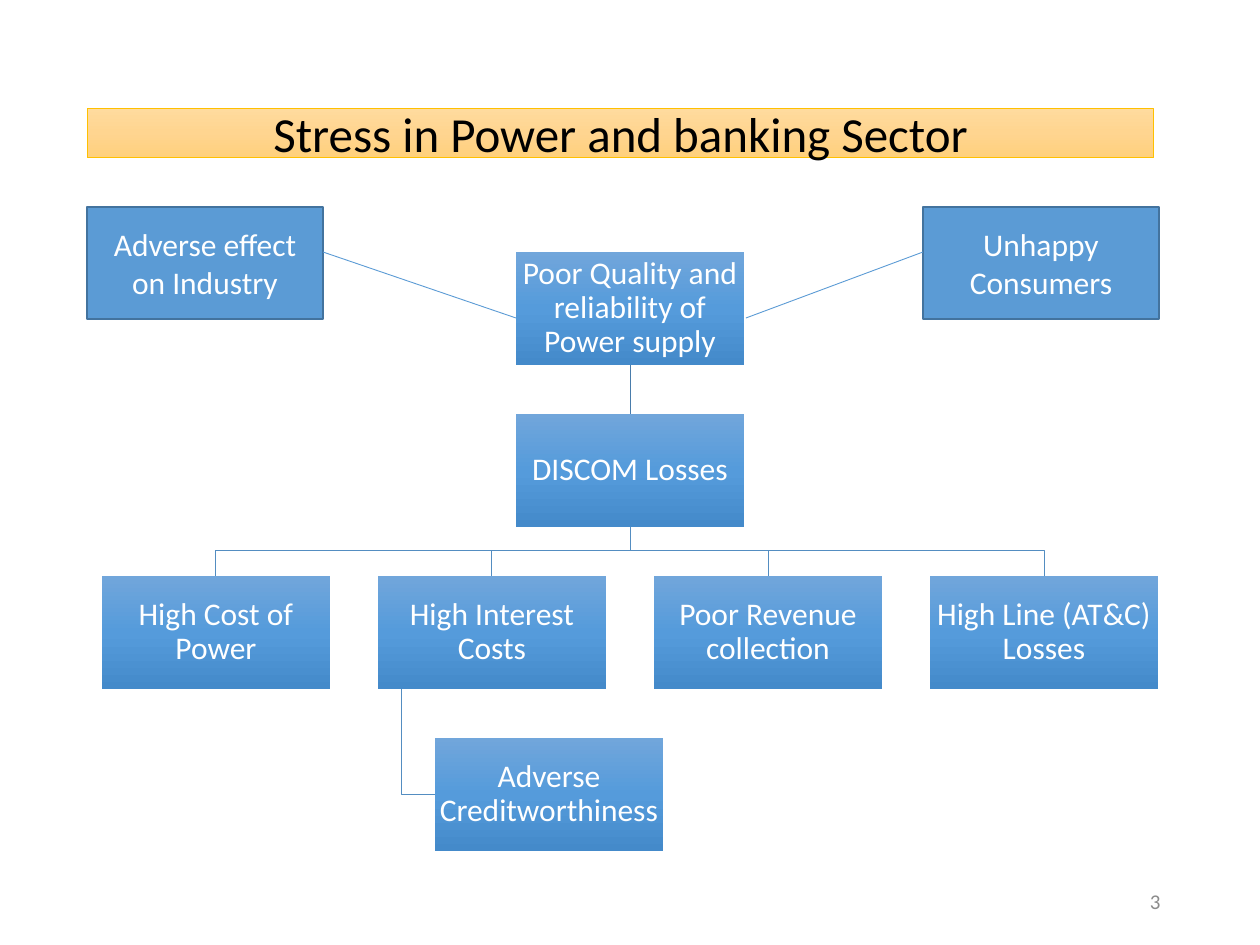
from lxml.etree import SubElement
from pptx import Presentation
from pptx.dml.color import RGBColor
from pptx.enum.shapes import MSO_CONNECTOR, MSO_SHAPE
from pptx.enum.text import MSO_ANCHOR, MSO_AUTO_SIZE, PP_ALIGN
from pptx.oxml.ns import qn
from pptx.util import Pt

PX = 914400 / 126
NODE_W, NODE_H = 228, 113
COLUMN_STEP, LEVEL_STEP = 276, 162
COLORS = {
    "white": "FFFFFF", "black": "000000", "number": "8C8C8C",
    "effect": "5B9BD5", "effect_edge": "43739E",
    "branch": "538DC1", "trunk": "497CAB", "title_edge": "FFC000",
}
NODE_GRADIENT = ("71A6DB", "559BDB", "448ACA")
TITLE_GRADIENT = ("FFDB9E", "FFD590", "FFD07C")


def emu(*lengths):
    """Turn px lengths into EMU."""
    return [round(length * PX) for length in lengths]


def color(name):
    """Look up a named colour."""
    return RGBColor.from_string(COLORS[name])


def set_line(shape, name, width=0.5):
    """Give an outline or connector its colour and width."""
    shape.line.color.rgb = color(name)
    shape.line.width = Pt(width)


def set_gradient(shape, stops):
    """Fill a shape with a three-stop gradient from top to bottom."""
    shape.fill.gradient()
    gradient = shape.fill._xPr.find(qn("a:gradFill"))
    for child in list(gradient):
        gradient.remove(child)
    stop_list = SubElement(gradient, qn("a:gsLst"))
    for position, stop in zip((0, 50000, 100000), stops):
        entry = SubElement(stop_list, qn("a:gs"), pos=str(position))
        SubElement(entry, qn("a:srgbClr"), val=stop)
    SubElement(gradient, qn("a:lin"), ang="5400000", scaled="0")


def set_text(shape, text, size, name, align=PP_ALIGN.CENTER, spacing=1.0):
    """Write one paragraph, centred vertically."""
    frame = shape.text_frame
    frame.text = text
    frame.word_wrap = True
    frame.auto_size = MSO_AUTO_SIZE.NONE
    frame.vertical_anchor = MSO_ANCHOR.MIDDLE
    paragraph = frame.paragraphs[0]
    paragraph.alignment = align
    paragraph.line_spacing = spacing
    font = paragraph.runs[0].font
    font.name, font.size, font.color.rgb = "Calibri", Pt(size), color(name)


def add_box(slide, box, text, spacing=1.0):
    """Add a rectangle with white centred text."""
    rectangle = slide.shapes.add_shape(MSO_SHAPE.RECTANGLE, *emu(*box))
    rectangle.shadow.inherit = False
    set_text(rectangle, text, 18, "white", spacing=spacing)
    return rectangle


def add_node(slide, left, top, text):
    """Add one box of the hierarchy."""
    node = add_box(slide, (left, top, NODE_W, NODE_H), text, 0.9)
    set_gradient(node, NODE_GRADIENT)
    node.line.fill.background()
    frame = node.text_frame
    frame.margin_left = frame.margin_right = frame.margin_top = frame.margin_bottom = emu(1)[0]
    return node


def add_branch(slide, *points):
    """Draw an open bent line through the points."""
    builder = slide.shapes.build_freeform(*points[0], scale=PX)
    builder.add_line_segments(points[1:], close=False)
    branch = builder.convert_to_shape()
    branch.shadow.inherit = False
    branch.fill.background()
    set_line(branch, "branch")


def add_straight(slide, start, end, name):
    """Draw a straight connector."""
    link = slide.shapes.add_connector(MSO_CONNECTOR.STRAIGHT, *emu(*start, *end))
    set_line(link, name)
    SubElement(link._element.spPr, qn("a:effectLst"))
    return link


def add_title(slide, box):
    """Format the title placeholder as a banner."""
    title = slide.shapes.title
    title.left, title.top, title.width, title.height = emu(*box)
    set_gradient(title, TITLE_GRADIENT)
    set_line(title, "title_edge")
    set_text(title, "Stress in Power and banking Sector", 28, "black")


def add_hierarchy(slide, left, top):
    """Place the supply, losses, causes and creditworthiness levels."""
    supply_top, losses_top, causes_top, credit_top = (top + LEVEL_STEP * level for level in range(4))
    trunk_left = left + COLUMN_STEP * 3 // 2
    trunk = trunk_left + NODE_W // 2
    losses_bottom = losses_top + NODE_H
    fork = (losses_bottom + causes_top) // 2
    causes = ("High Cost of Power", "High Interest Costs",
              "Poor Revenue collection", "High Line (AT&C) Losses")
    for column, cause in enumerate(causes):
        cause_left = left + COLUMN_STEP * column
        center = cause_left + NODE_W // 2
        add_branch(slide, (trunk, losses_bottom), (trunk, fork), (center, fork), (center, causes_top))
        add_node(slide, cause_left, causes_top, cause)

    interest_left = left + COLUMN_STEP
    stem, credit_left = interest_left + 23, interest_left + 57
    credit_middle = credit_top + NODE_H // 2
    add_branch(slide, (stem, causes_top + NODE_H), (stem, credit_middle), (credit_left, credit_middle))
    add_node(slide, credit_left, credit_top, "Adverse Creditworthiness")

    supply = add_node(slide, trunk_left, supply_top, "Poor Quality and reliability of Power supply")
    losses = add_node(slide, trunk_left, losses_top, "DISCOM Losses")
    link = add_straight(slide, (trunk, supply_top + NODE_H), (trunk, losses_top), "trunk")
    link.begin_connect(supply, 2)
    link.end_connect(losses, 0)


def add_effect(slide, box, text, start, end):
    """Add an outer effect box and its line to the supply box."""
    effect = add_box(slide, box, text)
    effect.fill.solid()
    effect.fill.fore_color.rgb = color("effect")
    set_line(effect, "effect_edge", 1)
    add_straight(slide, start, end, "effect")


def add_page_number(slide, box):
    """Add the page number at the lower right."""
    number = slide.shapes.add_textbox(*emu(*box))
    set_text(number, "3", 12, "number", PP_ALIGN.RIGHT)


def main():
    """Build and save the slide."""
    presentation = Presentation()
    presentation.slide_width, presentation.slide_height = emu(1260, 945)
    slide = presentation.slides.add_slide(presentation.slide_layouts[5])
    add_title(slide, (87, 108, 1067, 50))
    add_hierarchy(slide, 102, 252)
    add_effect(slide, (87, 207, 236, 112), "Adverse effect on Industry", (516, 318), (323, 252))
    add_effect(slide, (923, 207, 236, 112), "Unhappy Consumers", (746, 318), (923, 252))
    add_page_number(slide, (890, 876, 283, 50))
    presentation.save("out.pptx")


if __name__ == "__main__":
    main()
